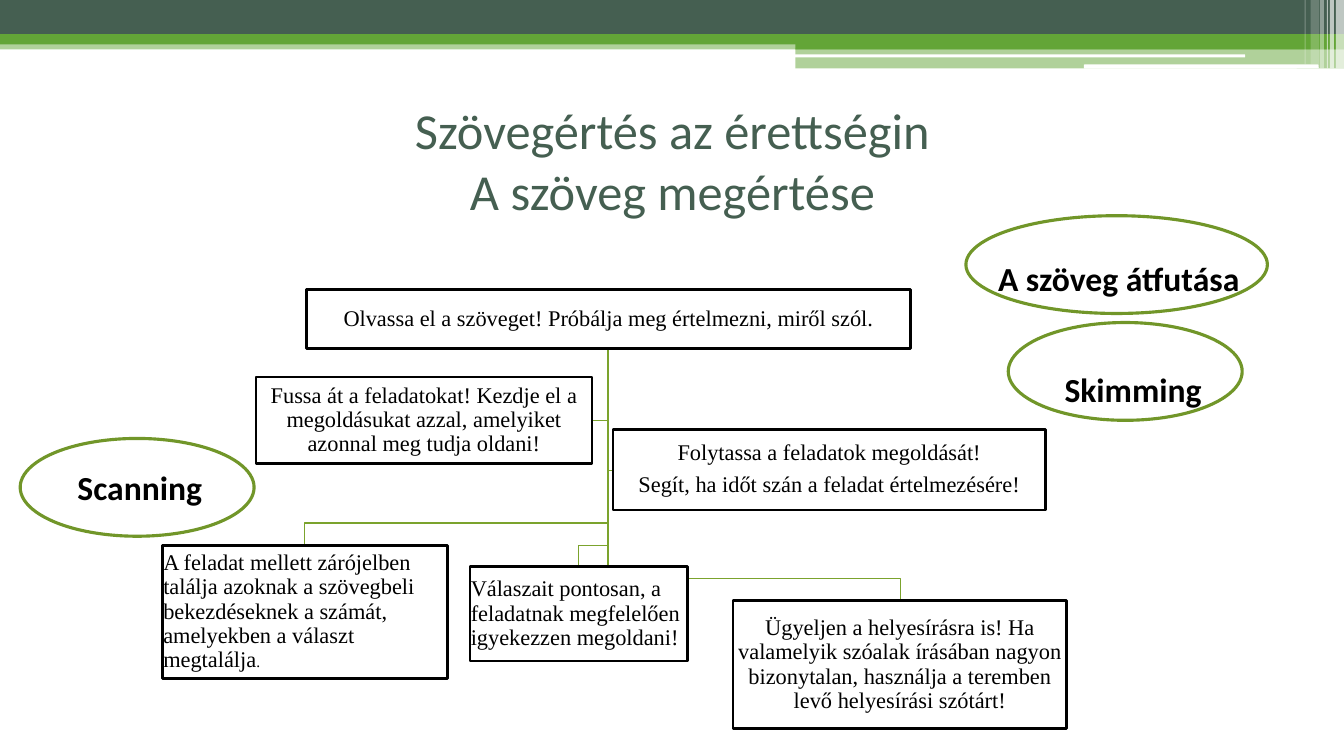
from dataclasses import dataclass
from typing import Any

from lxml import etree
from pptx import Presentation
from pptx import util as u
from pptx.dml.color import RGBColor
from pptx.enum import shapes, text
from pptx.oxml.ns import qn

SLATE = RGBColor(0x45, 0x5F, 0x51)
GREEN = RGBColor(0x63, 0xA5, 0x37)
BRANCH_GREEN = RGBColor(0x7B, 0xA3, 0x2D)
OVAL_GREEN = RGBColor(0x71, 0x96, 0x29)
WHITE = RGBColor(0xFF, 0xFF, 0xFF)
BLACK = RGBColor(0, 0, 0)

RECT = shapes.MSO_SHAPE.RECTANGLE
ROUND = shapes.MSO_SHAPE.ROUNDED_RECTANGLE
OVAL = shapes.MSO_SHAPE.OVAL
LEFT, CENTER = text.PP_ALIGN.LEFT, text.PP_ALIGN.CENTER

Area = tuple[float, float, float, float]
Point = tuple[float, float]


@dataclass
class Bar:
    area: Area
    color: RGBColor
    opacity: int = 100
    kind: Any = RECT


@dataclass
class Step:
    area: Area
    paragraphs: list[str]
    align: Any = CENTER
    border: float = 1.75
    filled: bool = True
    small_ending: str = ""


@dataclass
class Strategy:
    oval: Area
    label: Area
    name: str


BARS = [
    Bar((0, 0.4, 13.33, 0.09), GREEN, 50),
    Bar((0, 0, 13.33, 0.34), SLATE),
    Bar((0, 0.34, 13.33, 0.1), GREEN),
    Bar((7.89, 0.39, 5.44, 0.1), GREEN),
    Bar((7.89, 0.48, 5.44, 0.2), GREEN, 50),
    Bar((7.88, 0.54, 4.47, 0.03), WHITE, kind=ROUND),
    Bar((10.75, 0.64, 2.33, 0.04), WHITE, kind=ROUND),
    Bar((13.25, 0, 0.08, 0.68), WHITE, 65),
    Bar((13.19, 0, 0.04, 0.68), WHITE, 65),
    Bar((13.16, 0, 0.01, 0.68), WHITE, 60),
    Bar((13.09, 0, 0.04, 0.68), WHITE, 40),
    Bar((13, 0, 0.08, 0.64), WHITE, 20),
    Bar((12.94, 0, 0.01, 0.64), WHITE, 30),
]

# Every branch leaves the trunk under the first step
TRUNK = (6.03, 3.46)
BRANCHES: list[list[Point]] = [
    [(6.03, 4.67), (6.08, 4.67)],
    [(6.03, 4.17), (5.87, 4.17)],
    [(6.03, 5.74), (8.93, 5.74), (8.93, 5.96)],
    [(6.03, 5.41), (5.74, 5.41), (5.74, 5.62)],
    [(6.03, 5.19), (3.02, 5.19), (3.02, 5.41)],
]

STEPS = [
    Step((3.04, 2.87, 5.99, 0.59),
         ["Olvassa el a szöveget! Próbálja meg értelmezni, miről szól."],
         border=2, filled=False),
    Step((1.61, 5.41, 2.83, 1.32),
         ["A feladat mellett zárójelben találja azoknak a szövegbeli "
          "bekezdéseknek a számát, amelyekben a választ megtalálja"],
         align=LEFT, small_ending="."),
    Step((4.66, 5.62, 2.16, 0.94),
         ["Válaszait pontosan, a feladatnak megfelelően igyekezzen megoldani!"],
         align=LEFT),
    Step((7.27, 5.96, 3.31, 1.27),
         ["Ügyeljen a helyesírásra is! Ha valamelyik szóalak írásában nagyon "
          "bizonytalan, használja a teremben levő helyesírási szótárt!"],
         filled=False),
    Step((2.54, 3.74, 3.33, 0.86),
         ["Fussa át a feladatokat! Kezdje el a megoldásukat azzal, "
          "amelyiket azonnal meg tudja oldani!"]),
    Step((6.08, 4.26, 4.29, 0.8),
         ["Folytassa a feladatok megoldását!",
          "Segít, ha időt szán a feladat értelmezésére!"]),
]

STRATEGIES = [
    Strategy((9.58, 2.14, 2.99, 0.97), (9.8, 2.51, 2.69, 0.5), "A szöveg átfutása"),
    Strategy((10, 3.2, 2.32, 0.97), (10.46, 3.61, 1.64, 0.5), "Skimming"),
    Strategy((0.2, 4.35, 2.32, 0.97), (0.67, 4.58, 1.71, 0.5), "Scanning"),
]

TITLE_LINES = ["Szövegértés az érettségin", "A szöveg megértése"]
TITLE_FRAME = {"vertical_anchor": text.MSO_ANCHOR.MIDDLE, "word_wrap": True,
               "auto_size": text.MSO_AUTO_SIZE.NONE,
               "margin_top": u.Inches(0.05), "margin_bottom": u.Inches(0.55)}
STEP_FRAME = {"vertical_anchor": text.MSO_ANCHOR.MIDDLE, "word_wrap": True}
STEP_FRAME |= {f"margin_{side}": u.Inches(0.01)
               for side in ("left", "top", "right", "bottom")}
LABEL_FRAME = {"word_wrap": True, "auto_size": text.MSO_AUTO_SIZE.SHAPE_TO_FIT_TEXT}
STEP_SPACING = {"line_spacing": 0.9, "space_after": u.Pt(5.6)}
TITLE_FONT = {"name": "Calibri", "size": u.Pt(36), "bold": False}
STEP_FONT = {"name": "Times New Roman", "size": u.Pt(16)}
ENDING_FONT = STEP_FONT | {"size": u.Pt(11)}
LABEL_FONT = {"name": "Calibri", "size": u.Pt(24), "bold": True}


def apply(target: Any, values: dict[str, Any]) -> None:
    for name, value in values.items():
        setattr(target, name, value)


def add_run(paragraph: Any, words: str, font: dict[str, Any], color: RGBColor = BLACK) -> None:
    run = paragraph.add_run()
    run.text = words
    apply(run.font, font)
    run.font.color.rgb = color


def style(shape: Any, fill: RGBColor | None, line: RGBColor | None, width: float = 0) -> None:
    shape.shadow.inherit = False
    if fill is None:
        shape.fill.background()
    else:
        shape.fill.solid()
        shape.fill.fore_color.rgb = fill
    if line is None:
        shape.line.fill.background()
    else:
        shape.line.color.rgb = line
        shape.line.width = u.Pt(width)


def draw_bar(slide: Any, bar: Bar) -> None:
    shape = slide.shapes.add_shape(bar.kind, *map(u.Inches, bar.area))
    style(shape, bar.color, None)
    if bar.opacity < 100:
        color = next(shape.element.spPr.iter(qn("a:srgbClr")))
        etree.SubElement(color, qn("a:alpha"), val=str(bar.opacity * 1000))


def draw_title(slide: Any) -> None:
    title = slide.shapes.title
    apply(title, dict(zip(("left", "top", "width", "height"),
                          map(u.Inches, (0.67, 1.25, 12, 1.17)))))
    apply(title.text_frame, TITLE_FRAME)
    paragraph = title.text_frame.paragraphs[0]
    paragraph.alignment = CENTER
    for index, line in enumerate(TITLE_LINES):
        if index:
            paragraph.add_line_break()
        add_run(paragraph, line, TITLE_FONT, SLATE)


def draw_branch(slide: Any, points: list[Point]) -> None:
    builder = slide.shapes.build_freeform(*map(u.Inches, TRUNK))
    builder.add_line_segments([(u.Inches(x), u.Inches(y)) for x, y in points], close=False)
    style(builder.convert_to_shape(), None, BRANCH_GREEN, 1)


def draw_step(slide: Any, step: Step) -> None:
    box = slide.shapes.add_shape(RECT, *map(u.Inches, step.area))
    style(box, WHITE if step.filled else None, BLACK, step.border)
    frame = box.text_frame
    apply(frame, STEP_FRAME)
    for index, words in enumerate(step.paragraphs):
        paragraph = frame.add_paragraph() if index else frame.paragraphs[0]
        apply(paragraph, STEP_SPACING | {"alignment": step.align})
        add_run(paragraph, words, STEP_FONT)
    if step.small_ending:
        add_run(paragraph, step.small_ending, ENDING_FONT)


def draw_strategy(slide: Any, strategy: Strategy) -> None:
    oval = slide.shapes.add_shape(OVAL, *map(u.Inches, strategy.oval))
    style(oval, None, OVAL_GREEN, 2.25)
    label = slide.shapes.add_textbox(*map(u.Inches, strategy.label))
    apply(label.text_frame, LABEL_FRAME)
    add_run(label.text_frame.paragraphs[0], strategy.name, LABEL_FONT)


def main() -> None:
    deck = Presentation()
    deck.slide_width, deck.slide_height = u.Inches(13.33), u.Inches(7.5)
    slide = deck.slides.add_slide(deck.slide_layouts.get_by_name("Title Only"))
    draw_title(slide)
    for draw, items in ((draw_bar, BARS), (draw_branch, BRANCHES),
                        (draw_step, STEPS), (draw_strategy, STRATEGIES)):
        for item in items:
            draw(slide, item)
    deck.save("out.pptx")


if __name__ == "__main__":
    main()
